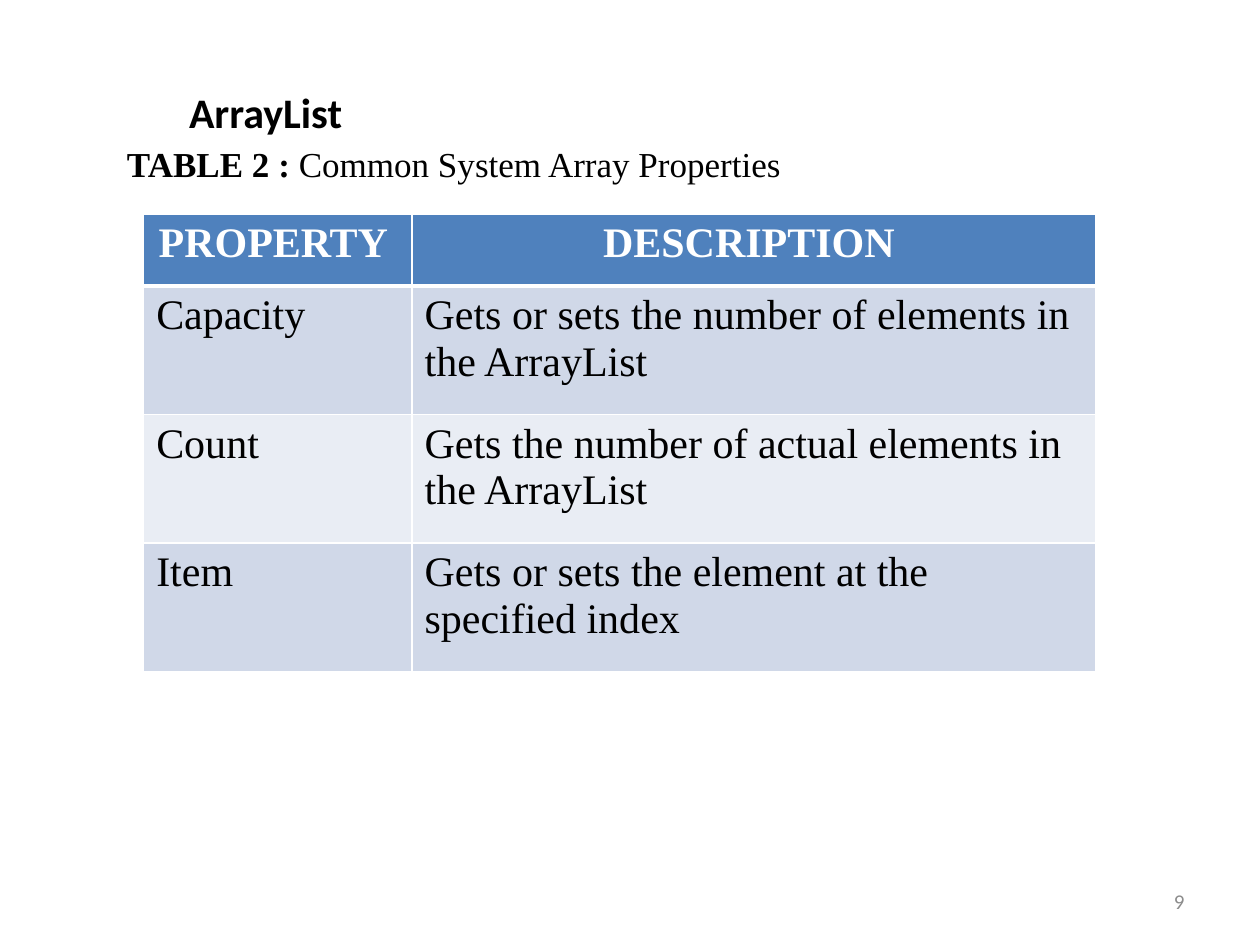
from dataclasses import dataclass

from lxml.etree import SubElement
from pptx import Presentation
from pptx.dml.color import RGBColor
from pptx.enum.text import MSO_ANCHOR, MSO_AUTO_SIZE, PP_ALIGN
from pptx.oxml.ns import qn
from pptx.util import Inches, Pt

BLACK = RGBColor(0x00, 0x00, 0x00)
WHITE = RGBColor(0xFF, 0xFF, 0xFF)
GRAY = RGBColor(0x8C, 0x8C, 0x8C)
HEADER_BLUE = RGBColor(0x4F, 0x81, 0xBD)
BAND_DARK = RGBColor(0xD0, 0xD8, 0xE8)
BAND_LIGHT = RGBColor(0xE9, 0xED, 0xF4)

SERIF = "Times New Roman"
SANS = "Calibri"
COLUMN_WIDTHS = (2.13, 5.43)
HEADER_HEIGHT = 0.57
ROW_HEIGHT = 1.02


@dataclass(frozen=True)
class Property:
    name: str
    description: str


HEADER = Property("PROPERTY ", "DESCRIPTION ")
PROPERTIES = (
    Property("Capacity", "Gets or sets the number of elements in the ArrayList"),
    Property("Count", "Gets the number of actual elements in the ArrayList"),
    Property("Item", "Gets or sets the element at the specified index"),
)


def style_paragraph(paragraph, font_name: str, size: float, color: RGBColor,
                    bold: bool | None = None, align=PP_ALIGN.LEFT) -> None:
    paragraph.alignment = align
    paragraph.font.name = font_name
    paragraph.font.size = Pt(size)
    paragraph.font.bold = bold
    paragraph.font.color.rgb = color


def add_title(slide) -> None:
    title = slide.shapes.title
    title.left, title.top = Inches(1.4), Inches(0.64)
    title.width, title.height = Inches(1.49), Inches(0.5)
    frame = title.text_frame
    frame.text = "ArrayList"
    frame.word_wrap = False
    frame.auto_size = MSO_AUTO_SIZE.NONE
    frame.vertical_anchor = MSO_ANCHOR.TOP
    style_paragraph(frame.paragraphs[0], SANS, 24, BLACK, True)


def add_caption(slide) -> None:
    caption = slide.shapes.add_textbox(Inches(0.91), Inches(1.08), Inches(8.74), Inches(0.44))
    caption.text_frame.word_wrap = True
    paragraph = caption.text_frame.paragraphs[0]
    style_paragraph(paragraph, SERIF, 20, BLACK)
    for text, bold in (("TABLE 2 : ", True), ("Common System Array Properties", False)):
        run = paragraph.add_run()
        run.text = text
        run.font.bold = bold


def set_borders(cell, bottom_width: float) -> None:
    properties = cell._tc.get_or_add_tcPr()
    for side, width in (("L", 1), ("R", 1), ("T", 1), ("B", bottom_width)):
        line = SubElement(properties, qn(f"a:ln{side}"), w=str(Pt(width)))
        fill = SubElement(line, qn("a:solidFill"))
        SubElement(fill, qn("a:srgbClr"), val=str(WHITE))


def fill_row(row, entry: Property, fill: RGBColor, is_header: bool = False) -> None:
    row.height = Inches(HEADER_HEIGHT if is_header else ROW_HEIGHT)
    color = WHITE if is_header else BLACK
    align = PP_ALIGN.CENTER if is_header else PP_ALIGN.LEFT
    for cell, text in zip(row.cells, (entry.name, entry.description)):
        cell.text = text
        style_paragraph(cell.text_frame.paragraphs[0], SERIF, 24, color, is_header, align)
        set_borders(cell, 3 if is_header else 1)
        cell.fill.solid()
        cell.fill.fore_color.rgb = fill


def add_property_table(slide) -> None:
    height = HEADER_HEIGHT + ROW_HEIGHT * len(PROPERTIES)
    table = slide.shapes.add_table(
        len(PROPERTIES) + 1, len(COLUMN_WIDTHS),
        Inches(1.14), Inches(1.7), Inches(sum(COLUMN_WIDTHS)), Inches(height)).table
    for column, width in zip(table.columns, COLUMN_WIDTHS):
        column.width = Inches(width)
    fill_row(table.rows[0], HEADER, HEADER_BLUE, True)
    for index, entry in enumerate(PROPERTIES):
        fill_row(table.rows[index + 1], entry, BAND_LIGHT if index % 2 else BAND_DARK)


def add_page_number(slide) -> None:
    number = slide.shapes.add_textbox(Inches(7.17), Inches(6.95), Inches(2.33), Inches(0.4))
    frame = number.text_frame
    frame.word_wrap = True
    frame.vertical_anchor = MSO_ANCHOR.MIDDLE
    frame.text = "9"
    style_paragraph(frame.paragraphs[0], SANS, 12, GRAY, align=PP_ALIGN.RIGHT)


def main() -> None:
    presentation = Presentation()
    presentation.slide_width = Inches(10)
    presentation.slide_height = Inches(7.5)
    slide = presentation.slides.add_slide(presentation.slide_layouts[5])
    add_caption(slide)
    add_title(slide)
    add_property_table(slide)
    add_page_number(slide)
    presentation.save("out.pptx")


if __name__ == "__main__":
    main()
